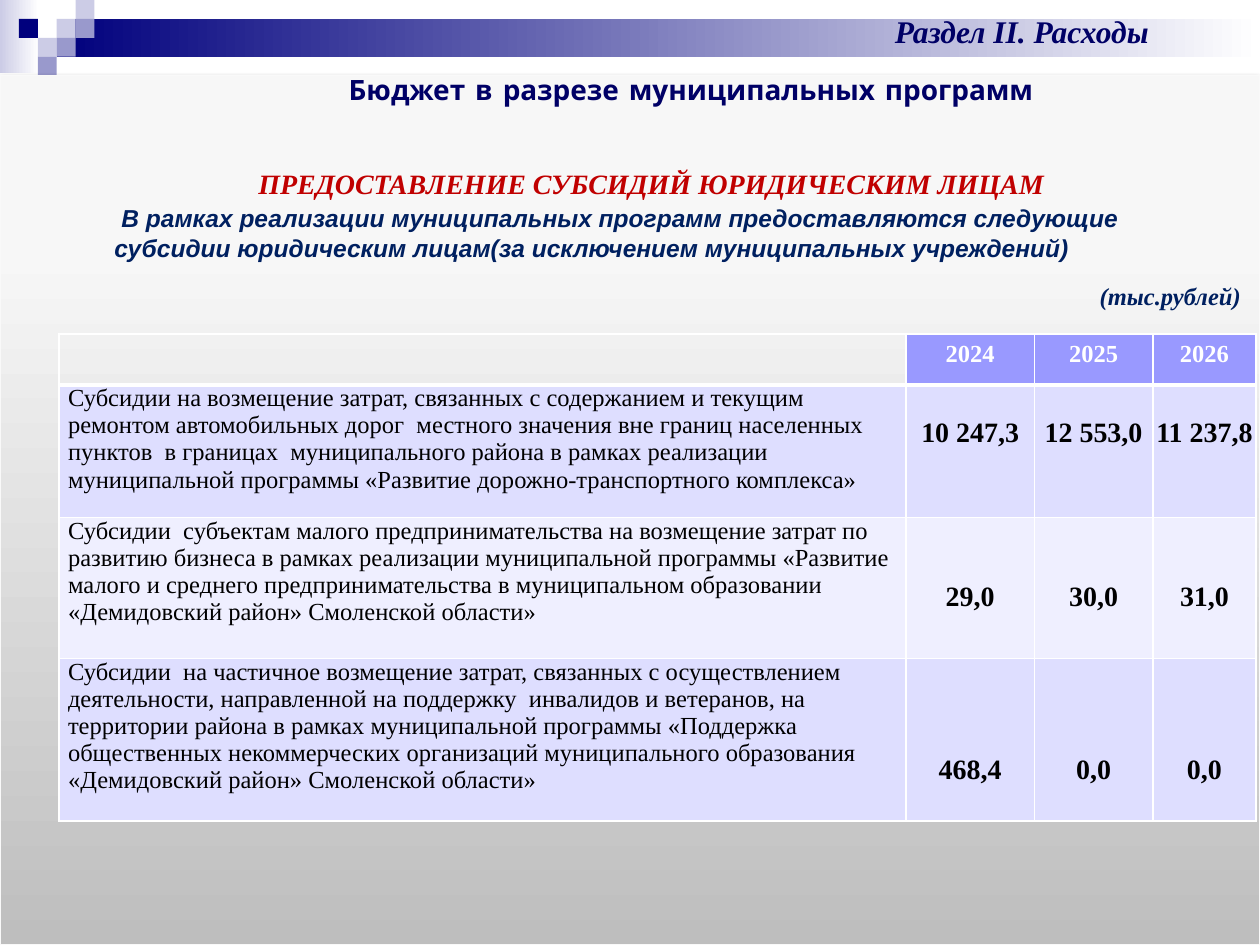
from lxml.etree import SubElement
from pptx import Presentation
from pptx.dml.color import RGBColor
from pptx.enum.shapes import MSO_SHAPE
from pptx.enum.text import PP_ALIGN
from pptx.oxml import parse_xml
from pptx.oxml.ns import nsdecls, qn
from pptx.util import Inches, Pt

# Content
HEAD = ["", "2024", "2025", "2026"]
ROWS = [
    ("Субсидии на возмещение затрат, связанных с содержанием и текущим ремонтом автомобильных дорог  местного значения вне границ населенных пунктов  в границах  муниципального района в рамках реализации муниципальной программы «Развитие дорожно-транспортного комплекса»",
     "10 247,3", "12 553,0", "11 237,8"),
    ("Субсидии  субъектам малого предпринимательства на возмещение затрат по развитию бизнеса в рамках реализации муниципальной программы «Развитие малого и среднего предпринимательства в муниципальном образовании «Демидовский район» Смоленской области»",
     "29,0", "30,0", "31,0"),
    ("Субсидии  на частичное возмещение затрат, связанных с осуществлением деятельности, направленной на поддержку  инвалидов и ветеранов, на территории района в рамках муниципальной программы «Поддержка общественных некоммерческих организаций муниципального образования «Демидовский район» Смоленской области»",
     "468,4", "0,0", "0,0"),
]
INK = {"navy": "00007D", "mid": "9999CC", "pale": "CCCCE6", "white": "FFFFFF",
       "title": "000066", "red": "C00000", "blue": "002060", "black": "000000",
       "head": "9999FF", "odd": "DEDEFF", "even": "EFEFFF", "edge": "F9F9F9",
       "low": "BEBEBE", "high": "F7F7F7", "top": "F8F8F8"}
SERIF, SANS, COMIC = "Times New Roman", "Arial", "Comic Neue"
LEFT, MID = PP_ALIGN.LEFT, PP_ALIGN.CENTER

# Text boxes: place, wrap, first-line indent, paragraphs (align, runs)
# Run: text, size, font, colour, italic
TEXTS = [
    ((0.31, 1.27, 9.22, 0.91), True, 0.5, [
        (MID, [("ПРЕДОСТАВЛЕНИЕ СУБСИДИЙ ЮРИДИЧЕСКИМ ЛИЦАМ", 16, SERIF, "red", True)]),
        (LEFT, [(" ", 16, SERIF, "red", True),
                ("В рамках реализации муниципальных программ предоставляются следующие", 14, SANS, "blue", True)]),
        (LEFT, [("субсидии юридическим лицам(за исключением муниципальных учреждений)", 14, SANS, "blue", True)])]),
    ((8.63, 2.18, 1.33, 0.34), False, 0, [
        (LEFT, [("(тыс.рублей)", 14, SERIF, "blue", True)])]),
    ((6.26, 0.05, 3.7, 0.4), True, 0, [
        (MID, [("Раздел II. Расходы", 18, SERIF, "title", True)])]),
    ((2.24, 0.53, 6.49, 0.37), True, 0, [
        (MID, [("Бюджет в разрезе муниципальных программ", 16, COMIC, "title", False)])]),
]

# Corner squares: column and row on a grid of UNIT
UNIT = 0.15
TILES = [(3, 1, "pale"), (4, 0, "pale"), (4, 1, "mid"), (2, 2, "pale"),
         (1, 1, "navy"), (3, 2, "mid"), (2, 3, "mid")]
COLS = [6.72, 1.02, 0.94, 0.82]
HIGH = [0.31, 1.05, 1.12, 1.29]
LINE = 0.25  # height of one 16 pt line

deck = Presentation()
deck.slide_width, deck.slide_height = Inches(10), Inches(7.5)
slide = deck.slides.add_slide(deck.slide_layouts[6])


def rgb(key):
    return RGBColor.from_string(INK[key])


def block(at, key, kind=MSO_SHAPE.RECTANGLE):
    shape = slide.shapes.add_shape(kind, *map(Inches, at))
    shape.shadow.inherit = False
    shape.fill.solid()
    shape.fill.fore_color.rgb = rgb(key)
    shape.line.fill.background()
    return shape


def fade(shape, stops, angle=0):
    marks = "".join(f'<a:gs pos="{pos * 1000}"><a:srgbClr val="{INK[key]}"/></a:gs>'
                    for pos, key in stops)
    grad = parse_xml(f'<a:gradFill {nsdecls("a")} rotWithShape="1"><a:gsLst>{marks}</a:gsLst>'
                     f'<a:lin ang="{angle * 60000}" scaled="0"/></a:gradFill>')
    props = shape.element.spPr
    props.replace(props.find(qn("a:solidFill")), grad)


def write(para, text, size, font, key, bold=True, slant=False):
    run = para.add_run()
    run.text = text
    face = run.font
    face.size, face.name, face.bold, face.italic = Pt(size), font, bold, slant
    face.color.rgb = rgb(key)


def edge(cell, low):
    props = cell._tc.get_or_add_tcPr()
    for spot, (tag, wide) in enumerate([("lnL", 1), ("lnR", 1), ("lnT", 1), ("lnB", low)]):
        props.insert(spot, parse_xml(
            f'<a:{tag} {nsdecls("a")} w="{Pt(wide)}"><a:solidFill>'
            f'<a:srgbClr val="{INK["white"]}"/></a:solidFill></a:{tag}>'))


# Top band
fade(block((0, 0, 0.31, 0.58), "pale"), [(0, "pale"), (100, "white")])
fade(block((3 * UNIT, UNIT, 10 - 3 * UNIT, 2 * UNIT), "navy"), [(0, "navy"), (100, "white")])
for col, row, key in TILES:
    block((col * UNIT, row * UNIT, UNIT, UNIT), key)

# Grey panel
panel = block((0, 0.6, 10, 6.9), "low", MSO_SHAPE.FLOWCHART_PROCESS)
fade(panel, [(0, "low"), (80, "high"), (100, "top")], 270)
panel.line.color.rgb = rgb("edge")
panel.line.width = Pt(0.75)
glow = SubElement(panel.element.spPr.find(qn("a:effectLst")), qn("a:outerShdw"),
                  blurRad=str(Pt(3.1)), dist=str(Pt(1.8)), dir="5400000", rotWithShape="0")
tint = SubElement(glow, qn("a:srgbClr"), val=INK["black"])
SubElement(tint, qn("a:alpha"), val="35000")

# Table
grid = slide.shapes.add_table(len(HIGH), len(COLS), Inches(0.47), Inches(2.65),
                              Inches(sum(COLS)), Inches(sum(HIGH))).table
grid.first_row = grid.horz_banding = False
for col, wide in zip(grid.columns, COLS):
    col.width = Inches(wide)
for r, (tall, row) in enumerate(zip(HIGH, [HEAD, *ROWS])):
    grid.rows[r].height = Inches(tall)
    for c, text in enumerate(row):
        cell = grid.cell(r, c)
        if text:
            cell.fill.solid()
            cell.fill.fore_color.rgb = rgb("head" if r == 0 else "odd" if r % 2 else "even")
        else:
            cell.fill.background()
        edge(cell, 1 if r else 3)
        if r:
            side = 0.01 if c else 0.07
            cell.margin_left = cell.margin_right = Inches(side)
            cell.margin_top = Inches(0.01 + r * LINE if c else 0)
            cell.margin_bottom = 0
        para = cell.text_frame.paragraphs[0]
        para.alignment = MID if c else LEFT
        if text:
            write(para, text, 16 if r and c else 14, SERIF,
                  "black" if r else "white", bold=c > 0)

# Titles and notes
for at, wrap, dent, paras in TEXTS:
    frame = slide.shapes.add_textbox(*map(Inches, at)).text_frame
    frame.word_wrap = wrap
    for n, (align, runs) in enumerate(paras):
        para = frame.add_paragraph() if n else frame.paragraphs[0]
        para.alignment = align
        if dent:
            props = para._p.get_or_add_pPr()
            props.set("marL", "0")
            props.set("indent", str(Inches(dent)))
        for text, size, font, key, slant in runs:
            write(para, text, size, font, key, slant=slant)

deck.save("out.pptx")
